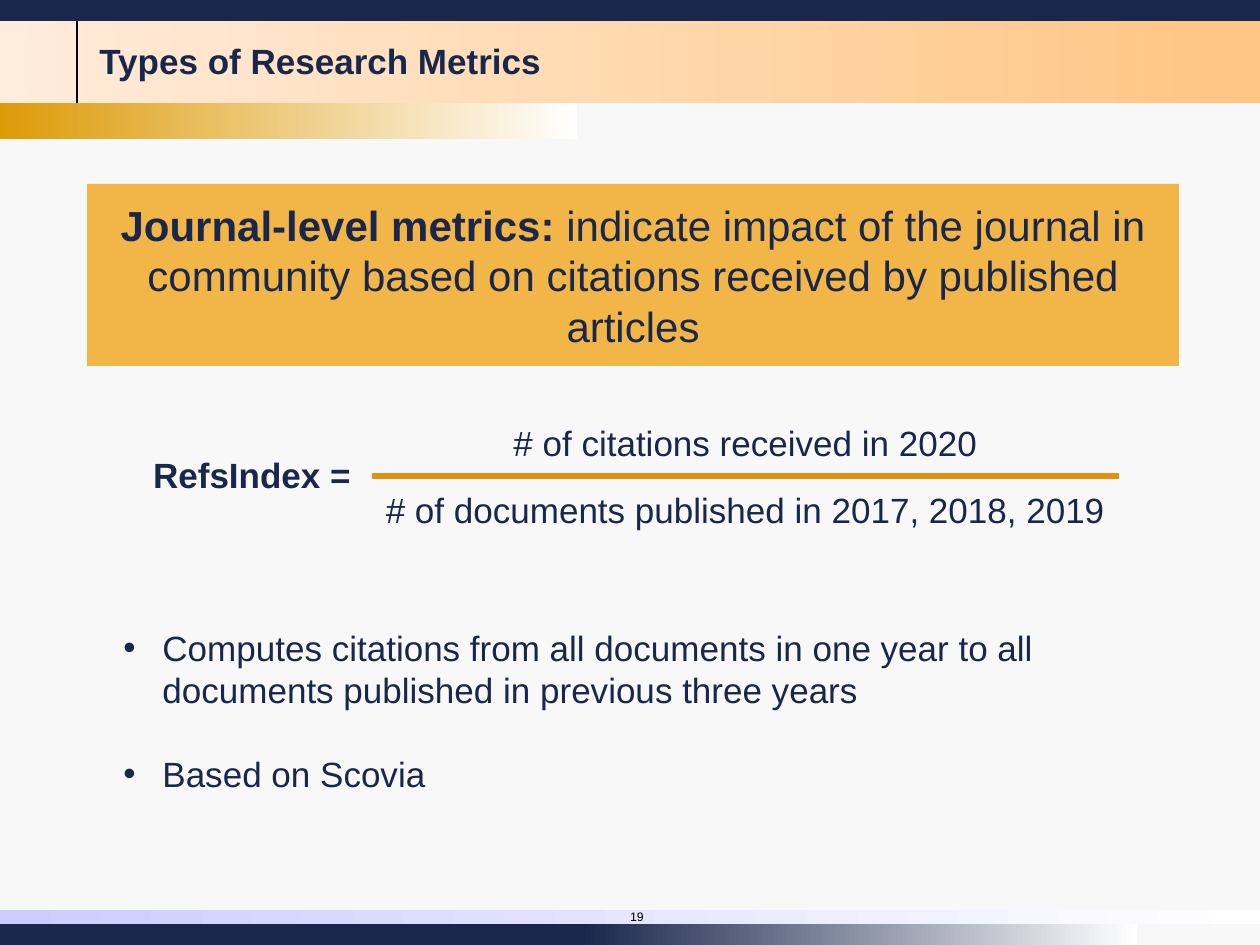
from lxml.etree import SubElement
from pptx import Presentation
from pptx.dml.color import RGBColor
from pptx.enum.shapes import MSO_CONNECTOR, MSO_SHAPE
from pptx.enum.text import MSO_ANCHOR, PP_ALIGN
from pptx.oxml.ns import qn
from pptx.util import Pt

EMU_PER_PX = 914400 / 126
WIDTH, HEIGHT = 1260, 945
NAVY, AMBER, WHITE, BLACK = "18274B", "F2B548", "FFFFFF", "000000"


def px(*lengths):
    return [round(length * EMU_PER_PX) for length in lengths]


def rgb(color):
    return RGBColor.from_string(color)


def add_band(shapes, box, *colors):
    """Add a rectangle: one colour is solid, two run from left to right."""
    band = shapes.add_shape(MSO_SHAPE.RECTANGLE, *px(*box))
    band.shadow.inherit = False
    band.line.fill.background()
    if len(colors) == 1:
        band.fill.solid()
        band.fill.fore_color.rgb = rgb(colors[0])
    else:
        band.fill.gradient()
        band.fill.gradient_angle = 0
        for stop, color in zip(band.fill.gradient_stops, colors):
            stop.color.rgb = rgb(color)
    return band


def add_line(shapes, start, end, color, width):
    line = shapes.add_connector(MSO_CONNECTOR.STRAIGHT, *px(*start, *end))
    line.line.color.rgb = rgb(color)
    line.line.width = Pt(width)
    SubElement(line._element.spPr, qn("a:effectLst"))


def add_run(paragraph, text, size=20, color=NAVY, bold=False):
    run = paragraph.add_run()
    run.text = text
    run.font.name = "Arial"
    run.font.size = Pt(size)
    run.font.bold = bold
    run.font.color.rgb = rgb(color)


def add_text(shapes, box, text, align=PP_ALIGN.LEFT, anchor=MSO_ANCHOR.TOP, **font):
    frame = shapes.add_textbox(*px(*box)).text_frame
    frame.word_wrap = True
    frame.vertical_anchor = anchor
    frame.paragraphs[0].alignment = align
    add_run(frame.paragraphs[0], text, **font)


def add_bullets(shapes, box, items, indent=39, gap=24):
    frame = shapes.add_textbox(*px(*box)).text_frame
    frame.word_wrap = True
    for index, item in enumerate(items):
        paragraph = frame.add_paragraph() if index else frame.paragraphs[0]
        if index:
            paragraph.space_before = Pt(gap)
        properties = paragraph._p.get_or_add_pPr()
        hang = px(indent)[0]
        properties.set("marL", str(hang))
        properties.set("indent", str(-hang))
        SubElement(properties, qn("a:buFont"), typeface="Arial")
        SubElement(properties, qn("a:buChar"), char="•")
        add_run(paragraph, item)


def add_frame(shapes):
    """Add the header and footer bands with the title and page number."""
    add_band(shapes, (0, 0, WIDTH, 103), "FFECDB", "FFC583")
    add_band(shapes, (0, 0, WIDTH, 21), NAVY)
    add_line(shapes, (77, 21), (77, 103), BLACK, 0.75)
    add_band(shapes, (0, 103, 577, 36), "DD9B08", WHITE)
    add_band(shapes, (0, 924, 1095, 21), NAVY)
    add_band(shapes, (0, 910, WIDTH, 14), "CCCCFF", WHITE)
    add_band(shapes, (581, 924, 556, 21), NAVY, WHITE)
    add_text(shapes, (87, 10, 1050, 100), "Types of Research Metrics",
             anchor=MSO_ANCHOR.MIDDLE, bold=True)
    add_text(shapes, (603, 903, 53, 25), "19",
             align=PP_ALIGN.RIGHT, size=7, color=BLACK)


def add_definition(shapes):
    banner = add_band(shapes, (87, 184, 1092, 182), AMBER)
    frame = banner.text_frame
    frame.word_wrap = True
    frame.vertical_anchor = MSO_ANCHOR.MIDDLE
    definition = frame.paragraphs[0]
    definition.alignment = PP_ALIGN.CENTER
    add_run(definition, "Journal-level metrics:", size=24, bold=True)
    add_run(definition, " indicate impact of the journal in community based on "
            "citations received by published articles", size=24)


def add_formula(shapes):
    formula = shapes.add_group_shape().shapes
    add_text(formula, (53, 447, 320, 55), "RefsIndex = ",
             align=PP_ALIGN.RIGHT, bold=True)
    add_text(formula, (398, 415, 695, 55), "# of citations received in 2020",
             align=PP_ALIGN.CENTER)
    add_text(formula, (372, 482, 747, 55),
             "# of documents published in 2017, 2018, 2019",
             align=PP_ALIGN.CENTER)
    add_line(formula, (372, 476), (1119, 476), "DE9410", 3)


def main():
    deck = Presentation()
    deck.slide_width, deck.slide_height = px(WIDTH, HEIGHT)
    slide = deck.slides.add_slide(deck.slide_layouts[6])
    slide.background.fill.solid()
    slide.background.fill.fore_color.rgb = rgb("F8F8F8")
    add_frame(slide.shapes)
    add_definition(slide.shapes)
    add_formula(slide.shapes)
    add_bullets(slide.shapes, (111, 620, 1091, 183), [
        "Computes citations from all documents in one year to all documents "
        "published in previous three years",
        "Based on Scovia",
    ])
    deck.save("out.pptx")


if __name__ == "__main__":
    main()
